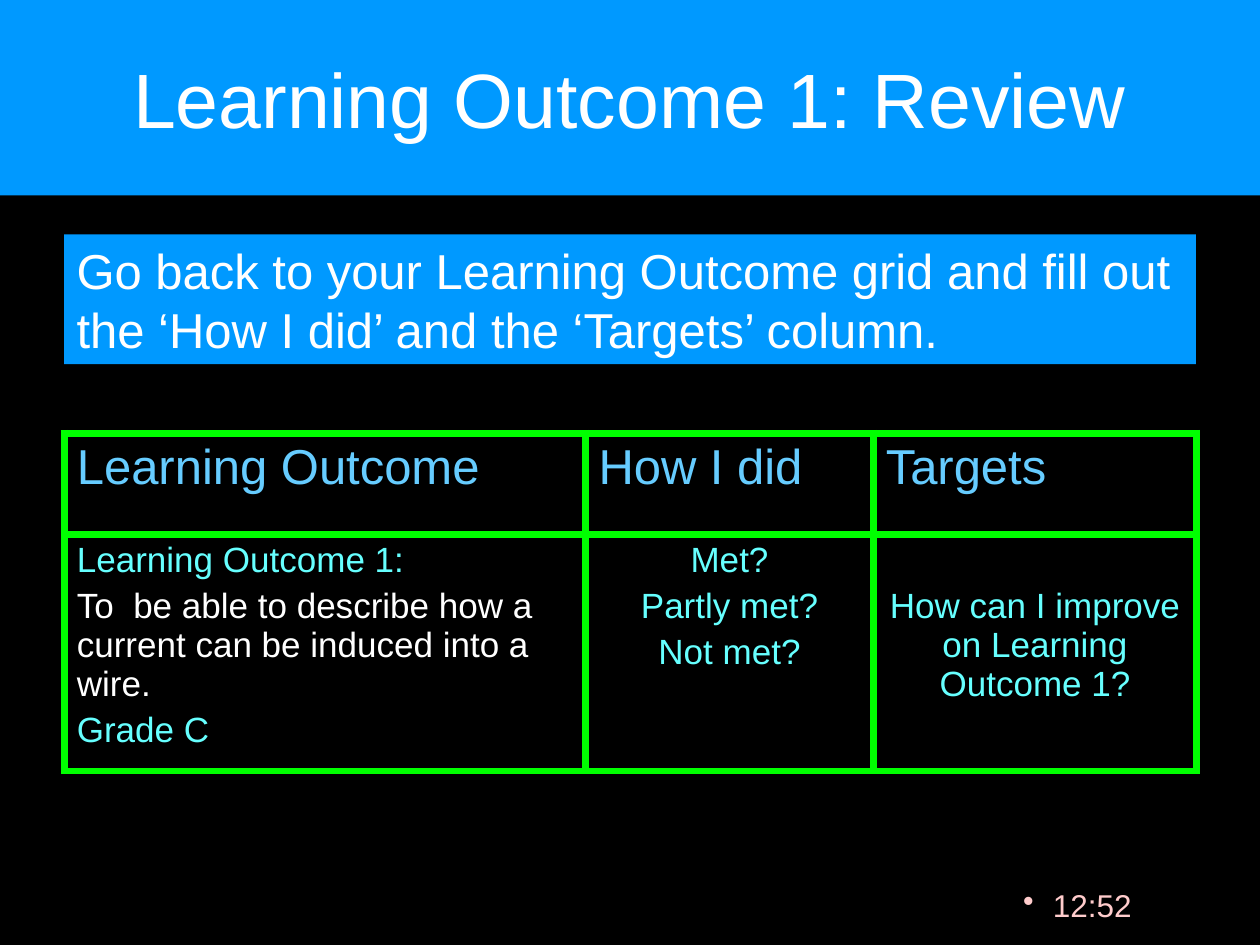
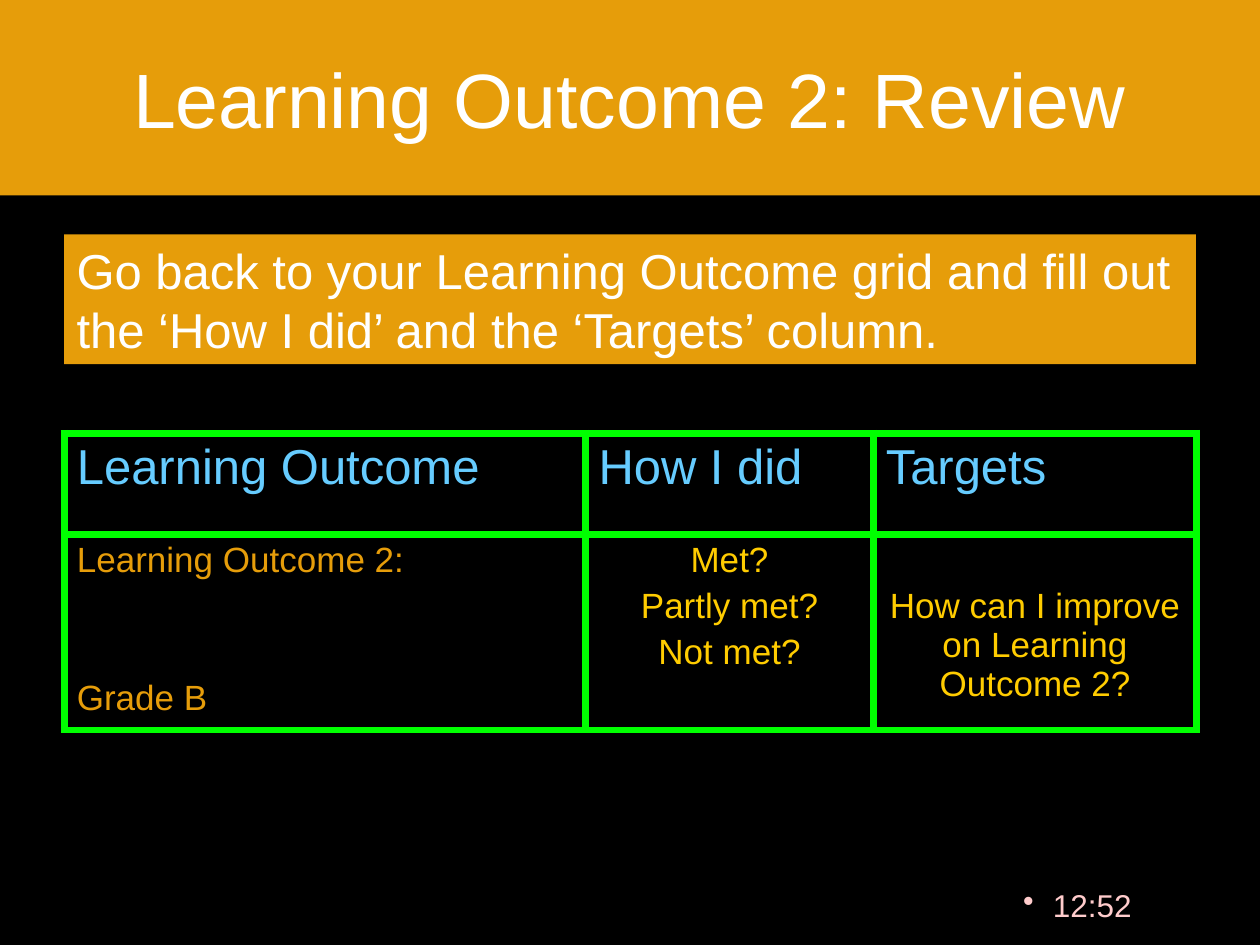
"""Build two learning-outcome review slides with a shared layout."""
from lxml import etree
from pptx import Presentation
from pptx.dml.color import RGBColor
from pptx.enum.shapes import MSO_SHAPE as Shape
from pptx.enum.text import MSO_ANCHOR as Anchor, PP_ALIGN as Align
from pptx.oxml.ns import qn
from pptx.util import Pt

COLOURS = {
    "background": "000000", "text": "FFFFFF", "clock": "FFCCCC",
    "header": "66CCFF", "border": "00FF00", "blue": "0099FF",
    "cyan": "66FFFF", "orange": "E69D0A", "yellow": "FFCC00",
}
FONT = "Arial"
CLOCK = "12:52"
INSTRUCTION = ("Go back to your Learning Outcome grid and fill out "
               "the ‘How I did’ and the ‘Targets’ column.")
HEADERS = ["Learning Outcome", "How I did", "Targets"]
RATINGS = ["Met?", "Partly met?", "Not met?"]
REVIEWS = [
    {"number": 1, "band": "blue", "label": "cyan", "prompt": "cyan", "grade": "Grade C",
     "aim": "To  be able to describe how a current can be induced into a wire."},
    {"number": 2, "band": "orange", "label": "orange", "prompt": "yellow", "grade": "Grade B",
     "aim": None},
]

SLIDE_SIZE = (720, 540)
TITLE_BOX = (0, 0, 720, 111.6)
INSTRUCTION_BOX = (36.7, 133.9, 646.6, 74.2)
CLOCK_BOX = (564.5, 502.6, 113, 37.4)
TABLE_ORIGIN = (36.7, 247.7)
COLUMN_WIDTHS = (298.1, 164.2, 185)
ROW_HEIGHTS = (57.6, 99.4)
BORDER_WIDTH = 4.5
CELL_SIZE = 20
PARAGRAPH_GAP = 4
LINE_STEP = 26.3
CELL_MARGIN = 3.6


def colour(name):
    return RGBColor.from_string(COLOURS[name])


def write(paragraph, text, size, ink, align=Align.LEFT, gap=0):
    paragraph.alignment = align
    paragraph.space_before = Pt(gap)
    run = paragraph.add_run()
    run.text = text
    run.font.name = FONT
    run.font.size = Pt(size)
    run.font.color.rgb = colour(ink)


def add_band(slide, box, fill, text, size, align, anchor):
    shape = slide.shapes.add_shape(Shape.RECTANGLE, *map(Pt, box))
    shape.shadow.inherit = False
    shape.fill.solid()
    shape.fill.fore_color.rgb = colour(fill)
    shape.line.fill.background()
    frame = shape.text_frame
    frame.word_wrap = True
    frame.vertical_anchor = anchor
    write(frame.paragraphs[0], text, size, "text", align)
    return frame.paragraphs[0]


def add_clock(slide):
    frame = slide.shapes.add_textbox(*map(Pt, CLOCK_BOX)).text_frame
    frame.word_wrap = True
    paragraph = frame.paragraphs[0]
    write(paragraph, CLOCK, 18, "clock", Align.CENTER)
    properties = paragraph._p.get_or_add_pPr()
    etree.SubElement(properties, qn("a:buChar"), char="•")


def style_cell(cell):
    properties = cell._tc.get_or_add_tcPr()
    for side in ("lnL", "lnR", "lnT", "lnB"):
        line = etree.SubElement(properties, qn(f"a:{side}"), w=str(Pt(BORDER_WIDTH)))
        fill = etree.SubElement(line, qn("a:solidFill"))
        etree.SubElement(fill, qn("a:srgbClr"), val=COLOURS["border"])
    cell.fill.solid()
    cell.fill.fore_color.rgb = colour("background")
    cell.margin_top = cell.margin_bottom = Pt(CELL_MARGIN)


def fill_cell(cell, lines, size, align=Align.LEFT):
    frame = cell.text_frame
    for index, (text, ink, gap) in enumerate(lines):
        paragraph = frame.add_paragraph() if index else frame.paragraphs[0]
        write(paragraph, text, size, ink, align, gap if index else 0)


def add_grid(slide, review):
    outcome = f"Learning Outcome {review['number']}"
    size = (sum(COLUMN_WIDTHS), sum(ROW_HEIGHTS))
    table = slide.shapes.add_table(
        len(ROW_HEIGHTS), len(HEADERS), *map(Pt, TABLE_ORIGIN + size)).table
    table.first_row = table.horz_banding = False
    for column, width in zip(table.columns, COLUMN_WIDTHS):
        column.width = Pt(width)
    for row, height in zip(table.rows, ROW_HEIGHTS):
        row.height = Pt(height)
    for cell in table.iter_cells():
        style_cell(cell)
    for index, header in enumerate(HEADERS):
        fill_cell(table.cell(0, index), [(header, "header", 0)], 28)

    label, prompt = review["label"], review["prompt"]
    grade_gap = PARAGRAPH_GAP if review["aim"] else PARAGRAPH_GAP + 2 * LINE_STEP
    lines = [(f"{outcome}:", label, 0), (review["aim"], "text", PARAGRAPH_GAP),
             (review["grade"], label, grade_gap)]
    fill_cell(table.cell(1, 0), [line for line in lines if line[0]], CELL_SIZE)
    fill_cell(table.cell(1, 1), [(rating, prompt, PARAGRAPH_GAP) for rating in RATINGS],
              CELL_SIZE, Align.CENTER)
    target = table.cell(1, 2)
    target.margin_top = Pt(CELL_MARGIN + LINE_STEP)
    fill_cell(target, [(f"How can I improve on {outcome}?", prompt, 0)],
              CELL_SIZE, Align.CENTER)


def add_review(presentation, review):
    slide = presentation.slides.add_slide(presentation.slide_layouts[6])
    slide.background.fill.solid()
    slide.background.fill.fore_color.rgb = colour("background")
    add_clock(slide)
    add_band(slide, TITLE_BOX, review["band"], f"Learning Outcome {review['number']}: Review",
             44, Align.CENTER, Anchor.MIDDLE)
    add_grid(slide, review)
    instruction = add_band(slide, INSTRUCTION_BOX, review["band"], INSTRUCTION,
                           28, Align.LEFT, Anchor.TOP)
    instruction.line_spacing = Pt(33.7)


def main():
    presentation = Presentation()
    presentation.slide_width, presentation.slide_height = map(Pt, SLIDE_SIZE)
    for review in REVIEWS:
        add_review(presentation, review)
    presentation.save("out.pptx")


if __name__ == "__main__":
    main()
